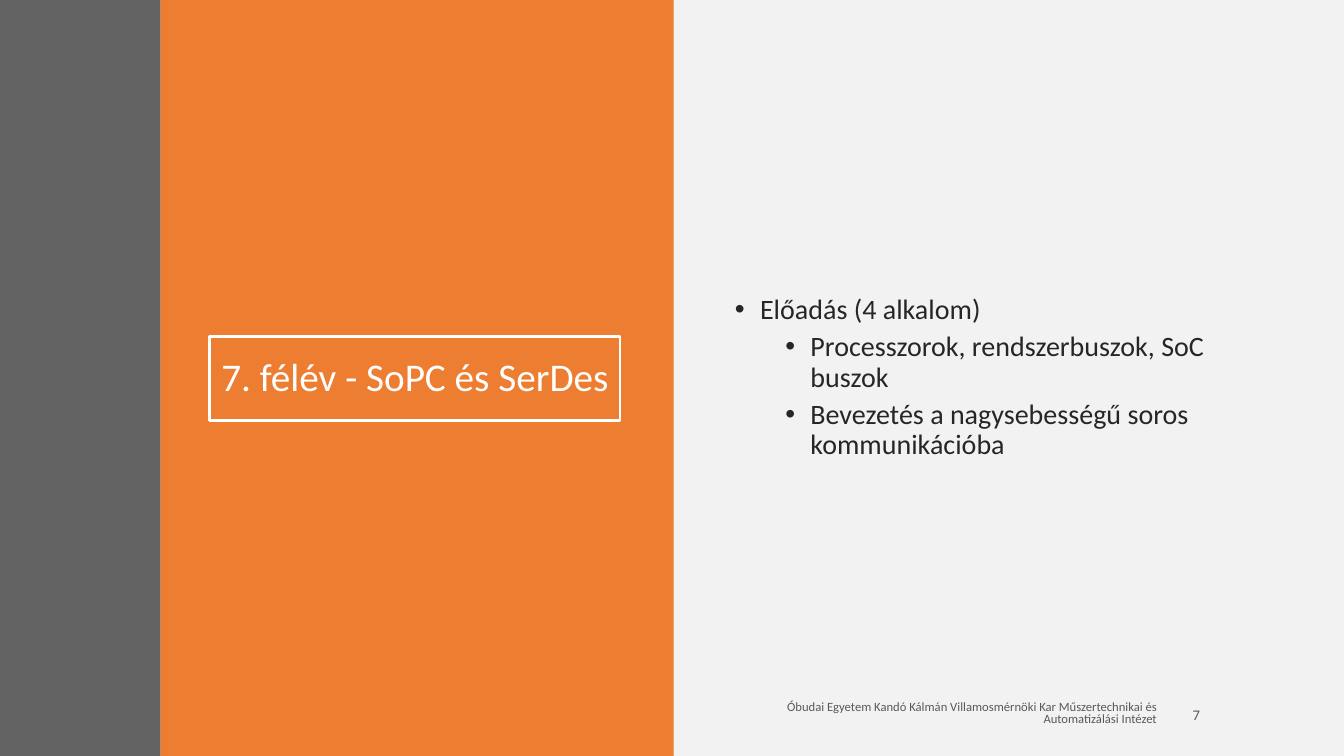
import pptx
import pptx.dml.color
import pptx.enum.shapes
import pptx.enum.text
import pptx.oxml.ns
import pptx.util
from lxml import etree
from pptx.util import Inches

RGBColor = pptx.dml.color.RGBColor
Align = pptx.enum.text.PP_ALIGN

BACKGROUND = RGBColor(0xF2, 0xF2, 0xF2)
ORANGE = RGBColor(0xED, 0x7D, 0x31)
DARK_GRAY = RGBColor(0x40, 0x40, 0x40)
WHITE = RGBColor(0xFF, 0xFF, 0xFF)
BODY_TEXT = RGBColor(0x26, 0x26, 0x26)
FOOTER_TEXT = RGBColor(0x59, 0x59, 0x59)


def add_panel(left, width, color):
    panel = slide.shapes.add_shape(
        pptx.enum.shapes.MSO_SHAPE.RECTANGLE,
        Inches(left), Inches(0), Inches(width), presentation.slide_height)
    panel.shadow.inherit = False
    panel.fill.solid()
    panel.fill.fore_color.rgb = color
    panel.line.fill.background()
    return panel


def write_paragraph(shape, paragraph, text, size, color, align, line_spacing):
    """Fill one paragraph of a wrapped, vertically centred shape."""
    shape.text_frame.word_wrap = True
    shape.text_frame.auto_size = pptx.enum.text.MSO_AUTO_SIZE.NONE
    shape.text_frame.vertical_anchor = pptx.enum.text.MSO_ANCHOR.MIDDLE
    paragraph.alignment = align
    paragraph.line_spacing = line_spacing
    run = paragraph.add_run()
    run.text = text
    run.font.name = "Calibri"
    run.font.size = pptx.util.Pt(size)
    run.font.color.rgb = color


presentation = pptx.Presentation()
presentation.slide_width = Inches(13.33)
presentation.slide_height = Inches(7.5)
slide = presentation.slides.add_slide(presentation.slide_layouts[5])
slide.background.fill.solid()
slide.background.fill.fore_color.rgb = BACKGROUND

# Panels on the left
add_panel(1.59, 5.09, ORANGE)
side_panel = add_panel(0, 1.59, DARK_GRAY)
side_color = side_panel.fill._xPr.find(".//" + pptx.oxml.ns.qn("a:srgbClr"))
etree.SubElement(side_color, pptx.oxml.ns.qn("a:alpha"), val="80000")

# Framed title, brought in front of the panels
title = slide.shapes.title
slide.shapes._spTree.append(title._element)
title.left, title.top = Inches(2.08), Inches(3.34)
title.width, title.height = Inches(4.07), Inches(0.83)
title.text_frame.margin_left = title.text_frame.margin_right = Inches(0.05)
title.line.color.rgb = WHITE
title.line.width = pptx.util.Pt(2)
write_paragraph(title, title.text_frame.paragraphs[0],
                "7. félév - SoPC és SerDes", 28, WHITE, Align.CENTER, 0.9)

# Bulleted topics
topics = [
    (0, "Előadás (4 alkalom)"),
    (1, "Processzorok, rendszerbuszok, SoC buszok"),
    (1, "Bevezetés a nagysebességű soros kommunikációba"),
]
body = slide.shapes.add_textbox(Inches(7.19), Inches(1.22), Inches(5.53), Inches(5.06))
for index, (level, topic) in enumerate(topics):
    frame = body.text_frame
    paragraph = frame.add_paragraph() if index else frame.paragraphs[0]
    paragraph.level = level
    paragraph.space_before = pptx.util.Pt(5 if level else 10)
    write_paragraph(body, paragraph, topic, 20, BODY_TEXT, Align.LEFT, 0.9)
    properties = paragraph._p.get_or_add_pPr()
    properties.set("marL", str(Inches(0.25 + 0.5 * level)))
    properties.set("indent", str(Inches(-0.25)))
    etree.SubElement(properties, pptx.oxml.ns.qn("a:buFont"), typeface="Arial")
    etree.SubElement(properties, pptx.oxml.ns.qn("a:buChar"), char="•")

# Footer and slide number
footer = slide.shapes.add_textbox(Inches(7.1), Inches(6.91), Inches(4.47), Inches(0.35))
write_paragraph(
    footer, footer.text_frame.paragraphs[0],
    "Óbudai Egyetem Kandó Kálmán Villamosmérnöki Kar Műszertechnikai és Automatizálási Intézet",
    9, FOOTER_TEXT, Align.RIGHT, 0.8)
number = slide.shapes.add_textbox(Inches(11.73), Inches(6.89), Inches(0.69), Inches(0.4))
write_paragraph(number, number.text_frame.paragraphs[0], "7", 10.5, FOOTER_TEXT, Align.LEFT, 1.0)

presentation.save("out.pptx")
